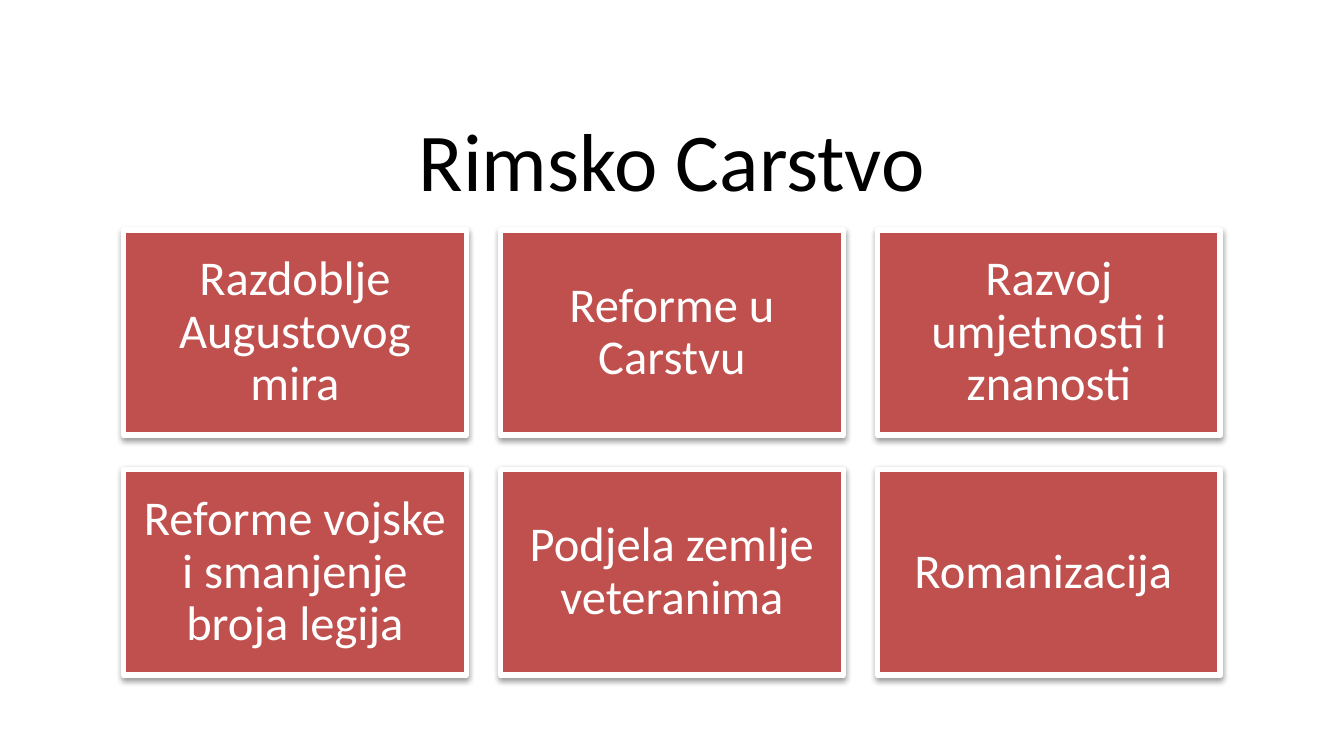
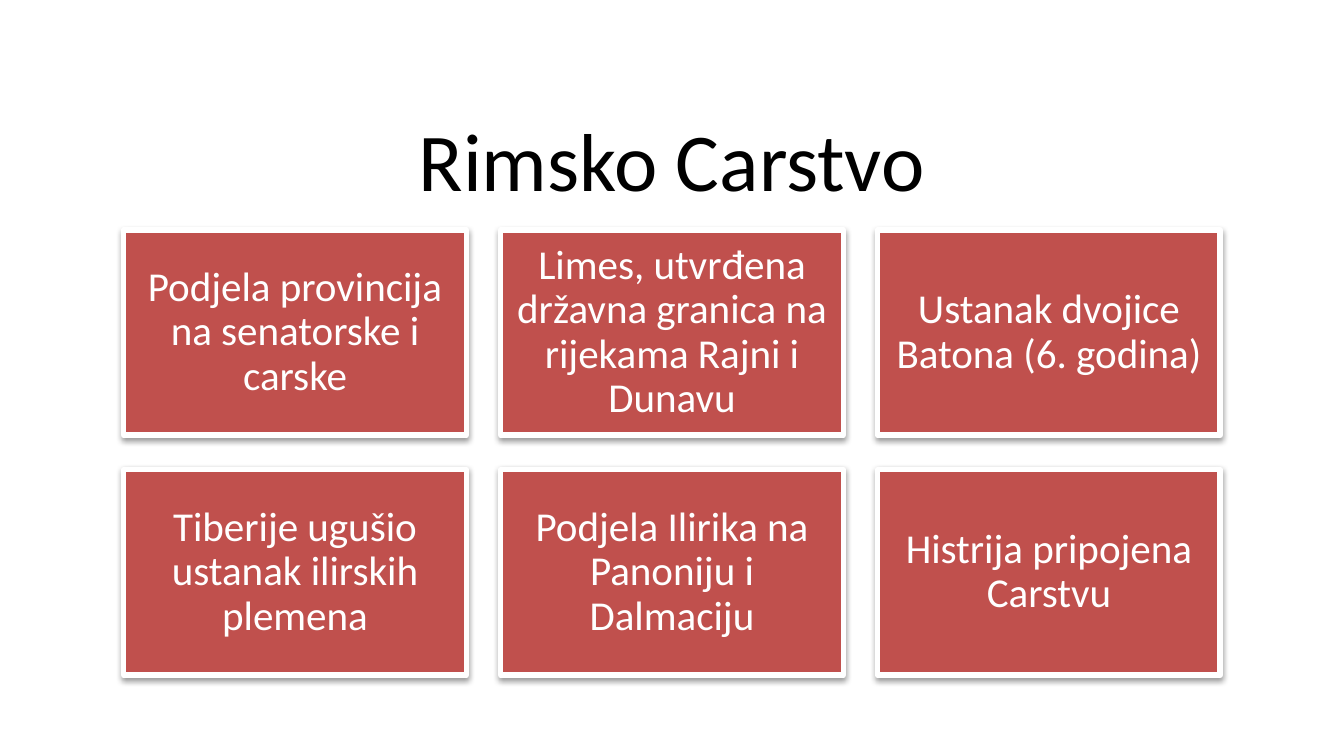
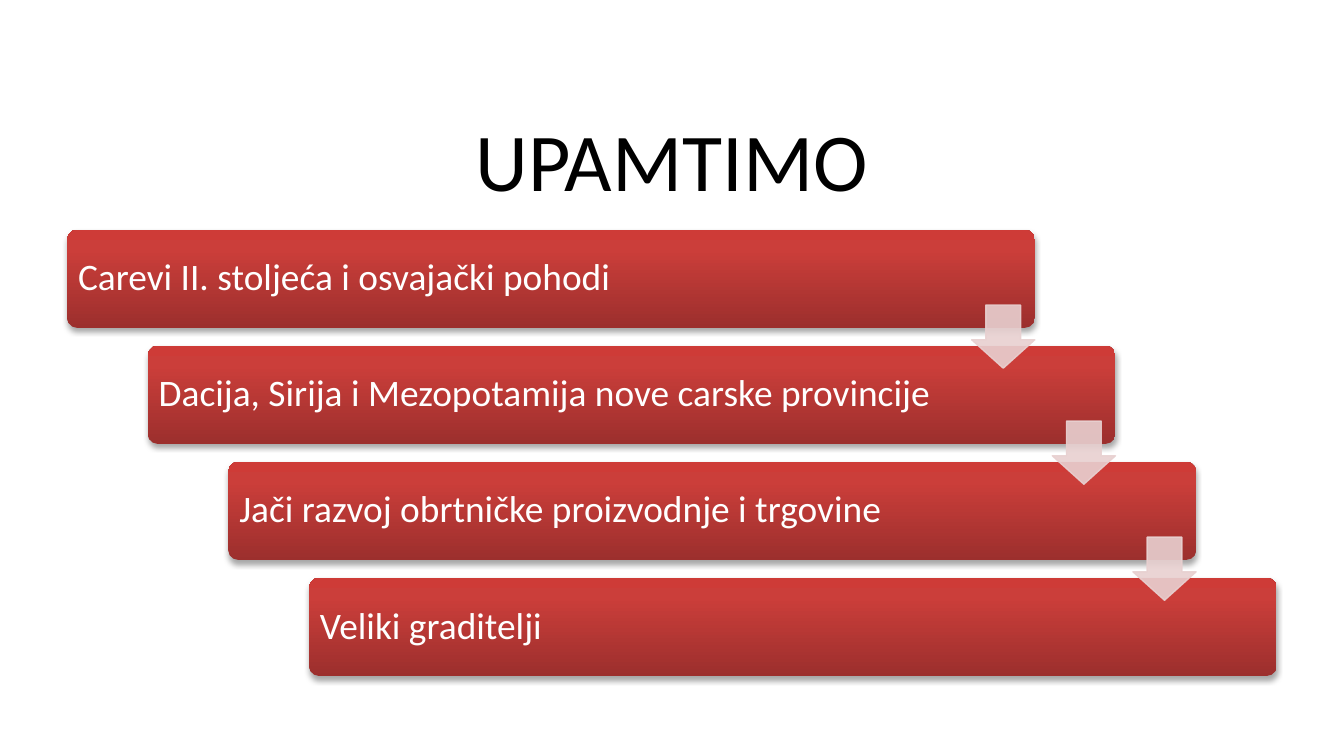
"""Build three slides on the Roman Empire: two card grids and a staircase of steps."""
from dataclasses import dataclass

from lxml.etree import SubElement
from pptx import Presentation
from pptx.dml.color import RGBColor
from pptx.enum.shapes import MSO_SHAPE
from pptx.enum.text import MSO_ANCHOR, MSO_AUTO_SIZE, PP_ALIGN
from pptx.oxml.ns import qn
from pptx.presentation import Presentation as Deck
from pptx.shapes.autoshape import Shape
from pptx.slide import Slide
from pptx.util import Inches, Pt

FONT = "Calibri"
COLORS = {
    "title": "000000",
    "text": "FFFFFF",
    "card": "C0504D",
    "border": "FFFFFF",
    "arrow": "E8D0D0",
    "shadow": "000000",
    "step_bottom": "9C2F2D",
    "step_middle": "CB3E3A",
    "step_top": "CE3B37",
}
STEP_STOPS = ((0, "step_bottom"), (80, "step_middle"), (100, "step_top"))

SLIDE_WIDTH = 10
SLIDE_HEIGHT = SLIDE_WIDTH * 9 / 16

COLUMNS = 3
CARD_TOP = 1.71
CARD_WIDTH, CARD_HEIGHT = 2.55, 1.53
CARD_GAP = CARD_WIDTH / 10
CARD_LEFT = (SLIDE_WIDTH - COLUMNS * CARD_WIDTH - (COLUMNS - 1) * CARD_GAP) / 2

STEP_LEFT, STEP_TOP, LAST_STEP_TOP = 0.5, 1.71, 4.3
STEP_WIDTH, STEP_HEIGHT = 7.2, 0.73
STEP_SHIFT = 0.6
ARROW_SIZE, ARROW_DROP = 0.47, 0.56


@dataclass(frozen=True)
class Box:
    """A rectangle in inches."""

    left: float
    top: float
    width: float
    height: float


@dataclass(frozen=True)
class CardGrid:
    """A titled slide of cards filled row by row."""

    title: str
    size: int
    inset: float
    cards: tuple[str, ...]


GRIDS = (
    CardGrid("Rimsko Carstvo", 26, 0.11, (
        "Razdoblje Augustovog mira",
        "Reforme u Carstvu",
        "Razvoj umjetnosti i znanosti",
        "Reforme vojske i smanjenje broja legija",
        "Podjela zemlje veteranima",
        "Romanizacija ",
    )),
    CardGrid("Rimsko Carstvo", 22, 0.09, (
        "Podjela provincija na senatorske i carske",
        "Limes, utvrđena državna granica na rijekama Rajni i Dunavu",
        "Ustanak dvojice Batona (6. godina)",
        "Tiberije ugušio ustanak ilirskih plemena",
        "Podjela Ilirika na Panoniju i Dalmaciju",
        "Histrija pripojena Carstvu",
    )),
)
STEPS_TITLE = "UPAMTIMO"
STEPS = (
    "Carevi II. stoljeća i osvajački pohodi",
    "Dacija, Sirija i Mezopotamija nove carske provincije",
    "Jači razvoj obrtničke proizvodnje i trgovine",
    "Veliki graditelji",
)


def rgb(name: str) -> RGBColor:
    """Return the named colour."""
    return RGBColor.from_string(COLORS[name])


def write(sp: Shape, text: str, size: int, color: str, align: PP_ALIGN) -> None:
    """Set one vertically centred paragraph in a shape."""
    tf = sp.text_frame
    tf.text = text
    tf.word_wrap = True
    tf.auto_size = MSO_AUTO_SIZE.NONE
    tf.vertical_anchor = MSO_ANCHOR.MIDDLE
    p = tf.paragraphs[0]
    p.alignment = align
    p.line_spacing = 0.9
    font = p.runs[0].font
    font.name, font.size = FONT, Pt(size)
    font.color.rgb = rgb(color)


def set_insets(sp: Shape, left: float, right: float, vertical: float) -> None:
    """Set the text margins of a shape."""
    tf = sp.text_frame
    tf.margin_left, tf.margin_right = Inches(left), Inches(right)
    tf.margin_top = tf.margin_bottom = Inches(vertical)


def add_box(s: Slide, kind: MSO_SHAPE, box: Box) -> Shape:
    """Add a preset shape without a shadow."""
    sp = s.shapes.add_shape(kind, Inches(box.left), Inches(box.top),
                            Inches(box.width), Inches(box.height))
    sp.shadow.inherit = False
    return sp


def add_alpha(color_element, percent: int) -> None:
    """Set the opacity of a colour element."""
    SubElement(color_element, qn("a:alpha"), val=str(percent * 1000))


def add_shadow(sp: Shape, opacity: int, distance: float) -> None:
    """Drop a soft shadow straight below a shape."""
    effects = sp._element.spPr.find(qn("a:effectLst"))
    shadow = SubElement(effects, qn("a:outerShdw"), blurRad=str(Pt(3.1)),
                        dist=str(Pt(distance)), dir="5400000", rotWithShape="0")
    color = SubElement(shadow, qn("a:srgbClr"), val=COLORS["shadow"])
    add_alpha(color, opacity)


def fill_step(sp: Shape) -> None:
    """Fill a step with the vertical red gradient."""
    sp.fill.gradient()
    sp.fill.gradient_angle = 90
    stops = next(sp._element.spPr.iter(qn("a:gsLst")))
    stops.clear()
    for position, name in STEP_STOPS:
        stop = SubElement(stops, qn("a:gs"), pos=str(position * 1000))
        SubElement(stop, qn("a:srgbClr"), val=COLORS[name])


def add_titled_slide(prs: Deck, title: str) -> Slide:
    """Add a title-only slide with the shared title style."""
    s = prs.slides.add_slide(prs.slide_layouts[5])
    sp = s.shapes.title
    sp.left, sp.top = Inches(0.5), Inches(0.84)
    sp.width, sp.height = Inches(9), Inches(0.78)
    write(sp, title, 44, "title", PP_ALIGN.CENTER)
    return s


def add_card(s: Slide, box: Box, text: str, grid: CardGrid) -> None:
    """Draw one white-bordered card."""
    sp = add_box(s, MSO_SHAPE.RECTANGLE, box)
    sp.fill.solid()
    sp.fill.fore_color.rgb = rgb("card")
    sp.line.color.rgb = rgb("border")
    sp.line.width = Pt(3)
    add_shadow(sp, 38, 1.6)
    set_insets(sp, grid.inset, grid.inset, grid.inset)
    write(sp, text, grid.size, "text", PP_ALIGN.CENTER)


def add_step(s: Slide, box: Box, text: str) -> None:
    """Draw one rounded step of the staircase."""
    sp = add_box(s, MSO_SHAPE.ROUNDED_RECTANGLE, box)
    sp.adjustments[0] = 0.1
    fill_step(sp)
    sp.line.fill.background()
    add_shadow(sp, 35, 1.8)
    set_insets(sp, 0.06, 0.9, 0.06)
    write(sp, text, 20, "text", PP_ALIGN.LEFT)


def add_arrow(s: Slide, step: Box) -> None:
    """Draw the arrow leading down from a step's right end."""
    left = step.left + step.width - ARROW_SIZE
    box = Box(left, step.top + ARROW_DROP, ARROW_SIZE, ARROW_SIZE)
    sp = add_box(s, MSO_SHAPE.DOWN_ARROW, box)
    sp.adjustments[0], sp.adjustments[1] = 0.55, 0.45
    sp.line.width = Pt(0.75)
    for fill in (sp.fill, sp.line.fill):
        fill.solid()
        fill.fore_color.rgb = rgb("arrow")
    for color in sp._element.spPr.iter(qn("a:srgbClr")):
        add_alpha(color, 90)


def build_grid(prs: Deck, grid: CardGrid) -> None:
    """Build a slide of cards."""
    s = add_titled_slide(prs, grid.title)
    for i, text in enumerate(grid.cards):
        row, column = divmod(i, COLUMNS)
        box = Box(CARD_LEFT + column * (CARD_WIDTH + CARD_GAP),
                  CARD_TOP + row * (CARD_HEIGHT + CARD_GAP),
                  CARD_WIDTH, CARD_HEIGHT)
        add_card(s, box, text, grid)


def build_steps(prs: Deck) -> None:
    """Build the staircase slide."""
    s = add_titled_slide(prs, STEPS_TITLE)
    drop = (LAST_STEP_TOP - STEP_TOP) / (len(STEPS) - 1)
    boxes = [Box(STEP_LEFT + i * STEP_SHIFT, STEP_TOP + i * drop,
                 STEP_WIDTH, STEP_HEIGHT) for i in range(len(STEPS))]
    for box, text in zip(boxes, STEPS):
        add_step(s, box, text)
    for box in boxes[:-1]:
        add_arrow(s, box)


def main() -> None:
    """Build and save the presentation."""
    prs = Presentation()
    prs.slide_width, prs.slide_height = Inches(SLIDE_WIDTH), Inches(SLIDE_HEIGHT)
    for grid in GRIDS:
        build_grid(prs, grid)
    build_steps(prs)
    prs.save("out.pptx")


if __name__ == "__main__":
    main()
